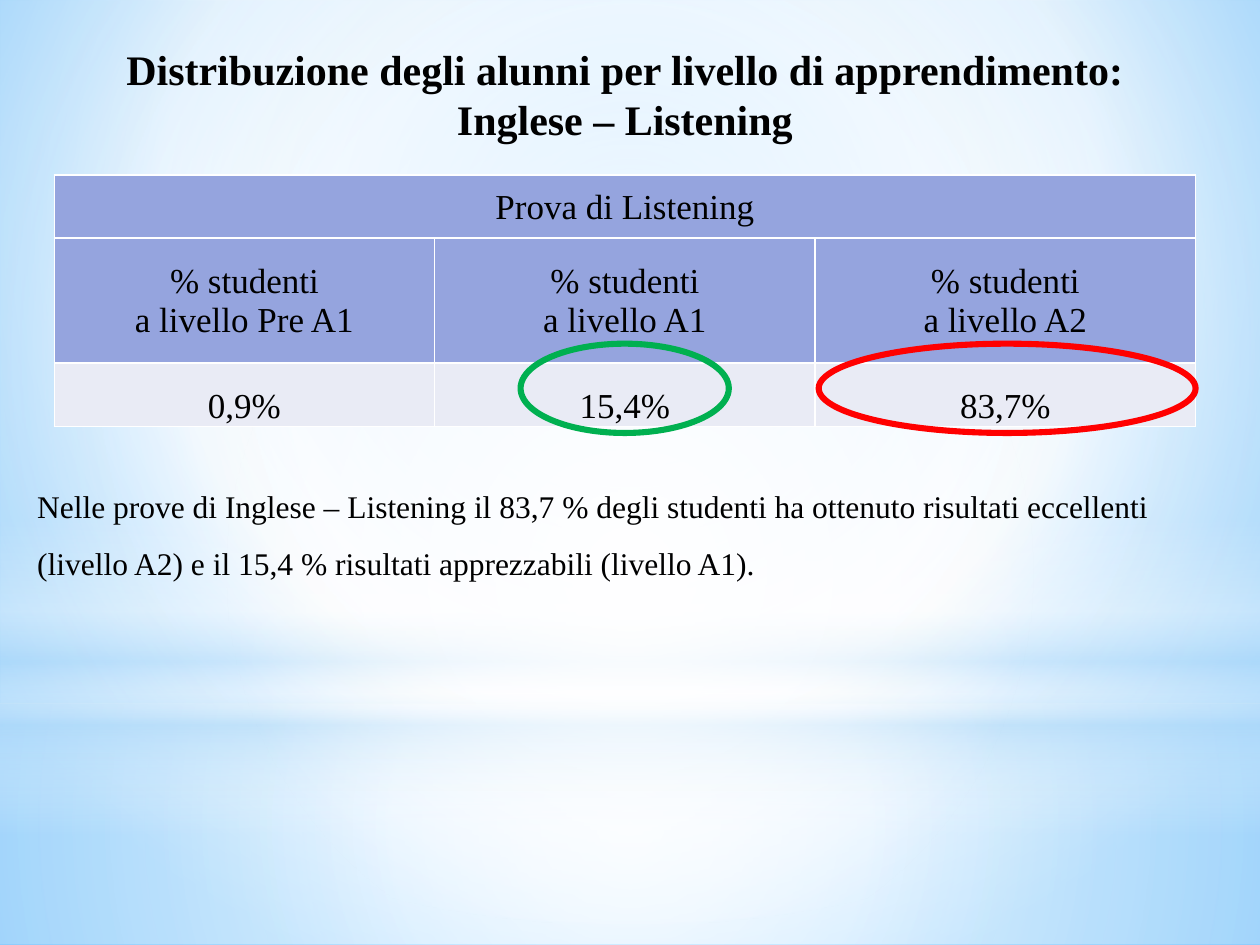
from lxml import etree
from pptx import Presentation
from pptx.dml.color import RGBColor
from pptx.enum.shapes import MSO_SHAPE
from pptx.enum.text import MSO_ANCHOR, MSO_AUTO_SIZE, PP_ALIGN
from pptx.oxml import parse_xml
from pptx.oxml.ns import nsdecls, qn
from pptx.util import Pt

FONT = "Times New Roman"
COLORS = {
    "text": "000000", "white": "FFFFFF", "sky": "9ED5FF", "blue": "5BB9FF",
    "pale": "B4DCFA", "header": "95A4DE", "value": "E9EBF5",
    "red": "FF0000", "green": "00B050",
}


def set_gradient(element, stops, direction):
    """Swap the solid fill for a gradient of (position %, color, opacity %) stops."""
    gs = "".join(
        f'<a:gs pos="{pos * 1000}"><a:srgbClr val="{COLORS[color]}">'
        f'<a:alpha val="{alpha * 1000}"/></a:srgbClr></a:gs>'
        for pos, color, alpha in stops)
    if direction == "down":
        shade = '<a:lin ang="5400000" scaled="0"/>'
    else:
        l, t, r, b = (v * 1000 for v in direction)
        shade = ('<a:path path="circle">'
                 f'<a:fillToRect l="{l}" t="{t}" r="{r}" b="{b}"/></a:path>')
    solid = element.find(".//" + qn("a:solidFill"))
    solid.getparent().replace(solid, parse_xml(
        f'<a:gradFill {nsdecls("a")} rotWithShape="1">'
        f'<a:gsLst>{gs}</a:gsLst>{shade}</a:gradFill>'))


def set_font(p, size, bold=False):
    p.font.name = FONT
    p.font.size = Pt(size)
    p.font.bold = bold
    p.font.color.rgb = RGBColor.from_string(COLORS["text"])


prs = Presentation()
prs.slide_width, prs.slide_height = Pt(720), Pt(540)
s = prs.slides.add_slide(prs.slide_layouts[5])

# Background and its soft light bands
s.background.fill.solid()
set_gradient(s.element.find(".//" + qn("p:bg")),
             [(0, "sky", 100), (60, "white", 100), (100, "blue", 100)],
             (20, 10, 20, 60))
center = (50, 50, 50, 50)
bands = [
    (MSO_SHAPE.RECTANGLE, 402, 138, center,
     [(0, "white", 91), (37, "white", 76), (100, "pale", 79)]),
    (MSO_SHAPE.RECTANGLE, 0, 402, center,
     [(0, "white", 89), (48, "white", 62), (100, "pale", 79)]),
    (MSO_SHAPE.RECTANGLE, 297, 180, "down",
     [(0, "white", 0), (29, "white", 30), (45, "pale", 40),
      (55, "white", 26), (65, "pale", 60), (100, "white", 0)]),
    (MSO_SHAPE.OVAL, 126, 402, center, [(0, "white", 100), (56, "white", 0)]),
]
for shape, top, height, direction, stops in bands:
    sp = s.shapes.add_shape(shape, 0, Pt(top), Pt(720), Pt(height))
    sp.shadow.inherit = False
    sp.line.fill.background()
    sp.fill.solid()
    set_gradient(sp.element, stops, direction)

# Results table
rows = [
    ["Prova di Listening", "", ""],
    ["% studenti\va livello Pre A1", "% studenti\va livello A1",
     "% studenti\va livello A2"],
    ["0,9%", "15,4%", "83,7%"],
]
row_heights = [36, 71.4, 36.2]
table = s.shapes.add_table(3, 3, Pt(31), Pt(100), Pt(652.2), Pt(143.6)).table
for col in table.columns:
    col.width = Pt(217.4)
for i, (texts, height) in enumerate(zip(rows, row_heights)):
    table.rows[i].height = Pt(height)
    is_value = i == 2
    for j, text in enumerate(texts):
        cell = table.cell(i, j)
        cell.margin_left = cell.margin_right = cell.margin_top = Pt(0.7)
        cell.margin_bottom = 0
        cell.vertical_anchor = MSO_ANCHOR.BOTTOM if is_value else MSO_ANCHOR.MIDDLE
        p = cell.text_frame.paragraphs[0]
        p.text = text
        p.alignment = PP_ALIGN.CENTER
        set_font(p, 20)
        tcPr = cell._tc.get_or_add_tcPr()
        for side in ("lnL", "lnR", "lnT", "lnB"):
            ln = etree.SubElement(tcPr, qn(f"a:{side}"), w=str(Pt(1)))
            fill = etree.SubElement(ln, qn("a:solidFill"))
            etree.SubElement(fill, qn("a:srgbClr"), val=COLORS["white"])
        cell.fill.solid()
        cell.fill.fore_color.rgb = RGBColor.from_string(
            COLORS["value" if is_value else "header"])
table.cell(0, 0).merge(table.cell(0, 2))

# Title, brought in front of the bands
title = s.shapes.title
title.element.getparent().append(title.element)
title.left, title.top, title.width, title.height = Pt(31), Pt(21), Pt(652.2), Pt(65.5)
tf = title.text_frame
tf.text = "Distribuzione degli alunni per livello di apprendimento:\nInglese – Listening"
tf.word_wrap = True
tf.auto_size = MSO_AUTO_SIZE.NONE
tf.vertical_anchor = MSO_ANCHOR.TOP
for p in tf.paragraphs:
    p.alignment = PP_ALIGN.CENTER
    p.space_before = Pt(0)
    set_font(p, 24, bold=True)

# Comment
tf = s.shapes.add_textbox(Pt(14.2), Pt(264.2), Pt(652.2), Pt(72.7)).text_frame
tf.word_wrap = True
p = tf.paragraphs[0]
p.text = ("Nelle prove di Inglese – Listening il 83,7 % degli studenti ha ottenuto "
          "risultati eccellenti (livello A2) e il 15,4 % risultati apprezzabili "
          "(livello A1).")
p.line_spacing = 1.5
set_font(p, 18)

# Rings around the two highest shares
for left, width, color in [(467.8, 215.4, "red"), (297.5, 119, "green")]:
    sp = s.shapes.add_shape(MSO_SHAPE.OVAL, Pt(left), Pt(196.4), Pt(width), Pt(51))
    sp.shadow.inherit = False
    sp.fill.background()
    sp.line.color.rgb = RGBColor.from_string(COLORS[color])
    sp.line.width = Pt(3.5)

prs.save("out.pptx")
